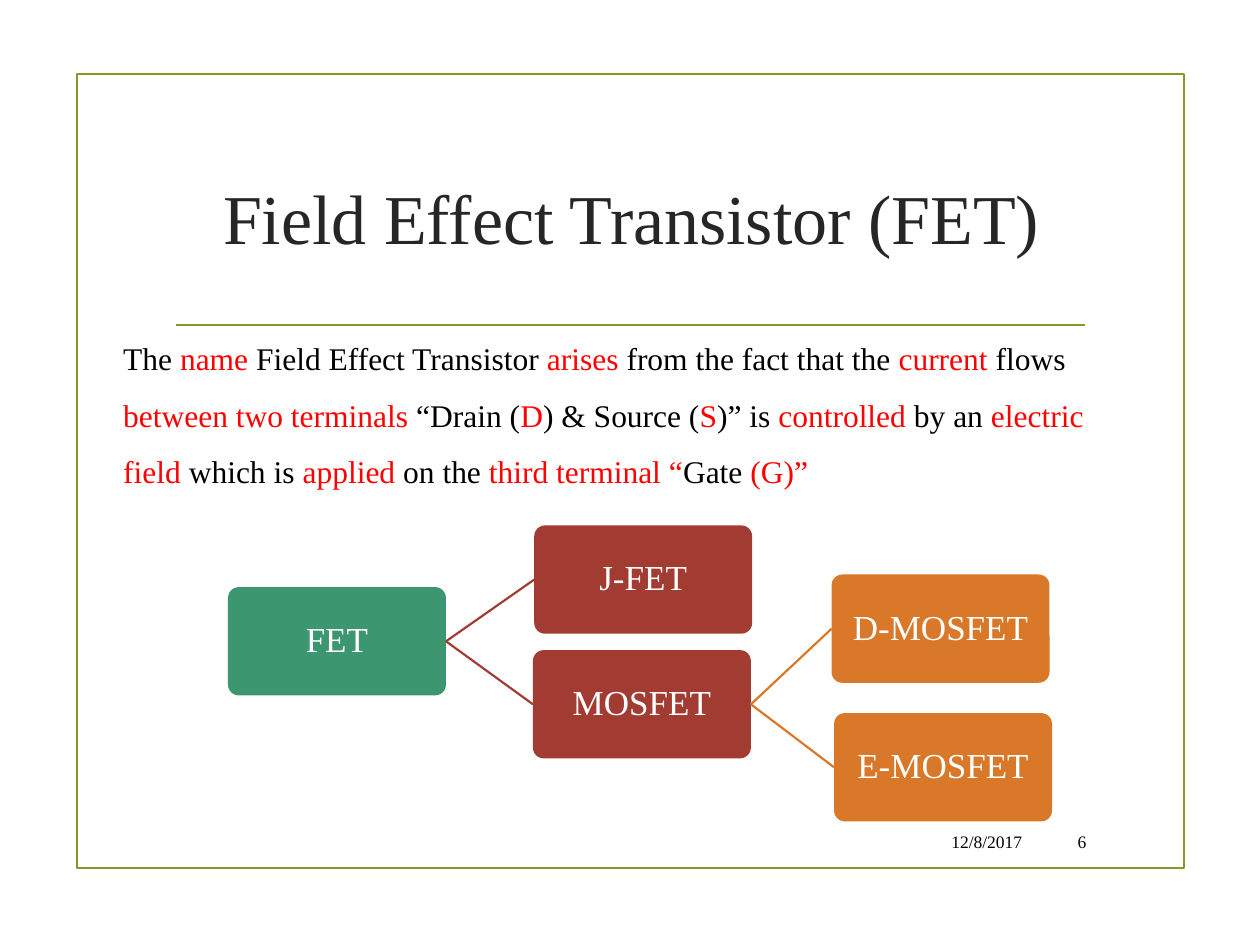
from dataclasses import dataclass
from typing import Optional

from lxml import etree
from pptx import Presentation
from pptx.dml.color import RGBColor
from pptx.enum import shapes, text
from pptx.oxml.ns import qn
from pptx.util import Inches, Pt

FONT = "Times New Roman"
BLACK = RGBColor(0x00, 0x00, 0x00)
WHITE = RGBColor(0xFF, 0xFF, 0xFF)
RED = RGBColor(0xFF, 0x00, 0x00)
CHARCOAL = RGBColor(0x26, 0x26, 0x26)
OLIVE = RGBColor(0x83, 0x99, 0x2A)
GREEN = RGBColor(0x3C, 0x97, 0x70)
BRICK = RGBColor(0xA2, 0x3C, 0x33)
ORANGE = RGBColor(0xD9, 0x78, 0x28)

NODE_W, NODE_H = 1.73, 0.86
LINE_W = Pt(1.25)

# Black and red stretches alternate at each bar, starting with black.
DEFINITION = (
    "The |name| Field Effect Transistor |arises| from the fact that the |current"
    "| flows |between two terminals |“Drain (|D|) & Source (|S|)” is |controlled "
    "|by an |electric field| which is |applied |on the |third terminal “|Gate| (G)”"
)


@dataclass(frozen=True)
class Node:
    label: str
    left: float
    top: float
    color: RGBColor
    parent: Optional["Node"] = None

    @property
    def middle(self) -> float:
        return self.top + NODE_H / 2


FET = Node("FET", 1.81, 4.66, GREEN)
JFET = Node("J-FET", 4.24, 4.17, BRICK, FET)
MOSFET = Node("MOSFET", 4.23, 5.16, BRICK, FET)
D_MOSFET = Node("D-MOSFET", 6.6, 4.56, ORANGE, MOSFET)
E_MOSFET = Node("E-MOSFET", 6.62, 5.66, ORANGE, MOSFET)
NODES = (FET, JFET, MOSFET, D_MOSFET, E_MOSFET)


def style_run(r, size: float, color: RGBColor) -> None:
    r.font.name = FONT
    r.font.size = Pt(size)
    r.font.color.rgb = color


def add_line(s, x1: float, y1: float, x2: float, y2: float, color: RGBColor) -> None:
    line = s.shapes.add_connector(
        shapes.MSO_CONNECTOR.STRAIGHT, Inches(x1), Inches(y1), Inches(x2), Inches(y2)
    )
    line.line.color.rgb = color
    line.line.width = LINE_W
    etree.SubElement(line._element.spPr, qn("a:effectLst"))


def add_frame(s) -> None:
    sp = s.shapes.add_shape(
        shapes.MSO_SHAPE.RECTANGLE, Inches(0.61), Inches(0.59), Inches(8.79), Inches(6.3)
    )
    sp.shadow.inherit = False
    sp.fill.background()
    sp.line.color.rgb = OLIVE
    sp.line.width = LINE_W


def set_title(s) -> None:
    title = s.shapes.title
    title.left, title.top = Inches(1.29), Inches(1)
    title.width, title.height = Inches(7.44), Inches(1.43)
    tf = title.text_frame
    tf.text = "Field Effect Transistor (FET)"
    tf.vertical_anchor = text.MSO_ANCHOR.MIDDLE
    p = tf.paragraphs[0]
    p.alignment = text.PP_ALIGN.CENTER
    style_run(p.runs[0], 40, CHARCOAL)


def add_definition(s) -> None:
    box = s.shapes.add_textbox(Inches(0.88), Inches(2.49), Inches(8.24), Inches(1.46))
    tf = box.text_frame
    tf.word_wrap = True
    tf.auto_size = text.MSO_AUTO_SIZE.SHAPE_TO_FIT_TEXT
    p = tf.paragraphs[0]
    p.line_spacing = 1.5
    for i, part in enumerate(DEFINITION.split("|")):
        r = p.add_run()
        r.text = part
        style_run(r, 18, RED if i % 2 else BLACK)


def add_footer(s, label: str, left: float, width: float) -> None:
    box = s.shapes.add_textbox(Inches(left), Inches(6.52), Inches(width), Inches(0.31))
    tf = box.text_frame
    tf.text = label
    tf.word_wrap = True
    tf.vertical_anchor = text.MSO_ANCHOR.MIDDLE
    p = tf.paragraphs[0]
    p.alignment = text.PP_ALIGN.RIGHT
    style_run(p.runs[0], 10, BLACK)


def add_node(s, node: Node) -> None:
    """Draw a box of the tree and the line that joins it to its parent."""
    if node.parent:
        add_line(s, node.parent.left + NODE_W, node.parent.middle,
                 node.left, node.middle, node.color)
    sp = s.shapes.add_shape(
        shapes.MSO_SHAPE.ROUNDED_RECTANGLE,
        Inches(node.left), Inches(node.top), Inches(NODE_W), Inches(NODE_H),
    )
    sp.adjustments[0] = 0.1
    sp.shadow.inherit = False
    sp.fill.solid()
    sp.fill.fore_color.rgb = node.color
    sp.line.fill.background()
    tf = sp.text_frame
    tf.text = node.label
    tf.word_wrap = True
    tf.vertical_anchor = text.MSO_ANCHOR.MIDDLE
    tf.margin_left = tf.margin_right = tf.margin_top = tf.margin_bottom = Inches(0.01)
    p = tf.paragraphs[0]
    p.alignment = text.PP_ALIGN.CENTER
    p.line_spacing = 0.9
    style_run(p.runs[0], 20, WHITE)


def main() -> None:
    prs = Presentation()
    prs.slide_width, prs.slide_height = Inches(10), Inches(7.5)
    s = prs.slides.add_slide(prs.slide_layouts.get_by_name("Title Only"))
    add_frame(s)
    add_line(s, 1.4, 2.58, 8.61, 2.58, OLIVE)
    set_title(s)
    add_footer(s, "12/8/2017", 6.95, 1.26)
    add_footer(s, "6", 8.29, 0.43)
    add_definition(s)
    for node in NODES:
        add_node(s, node)
    prs.save("out.pptx")


if __name__ == "__main__":
    main()
